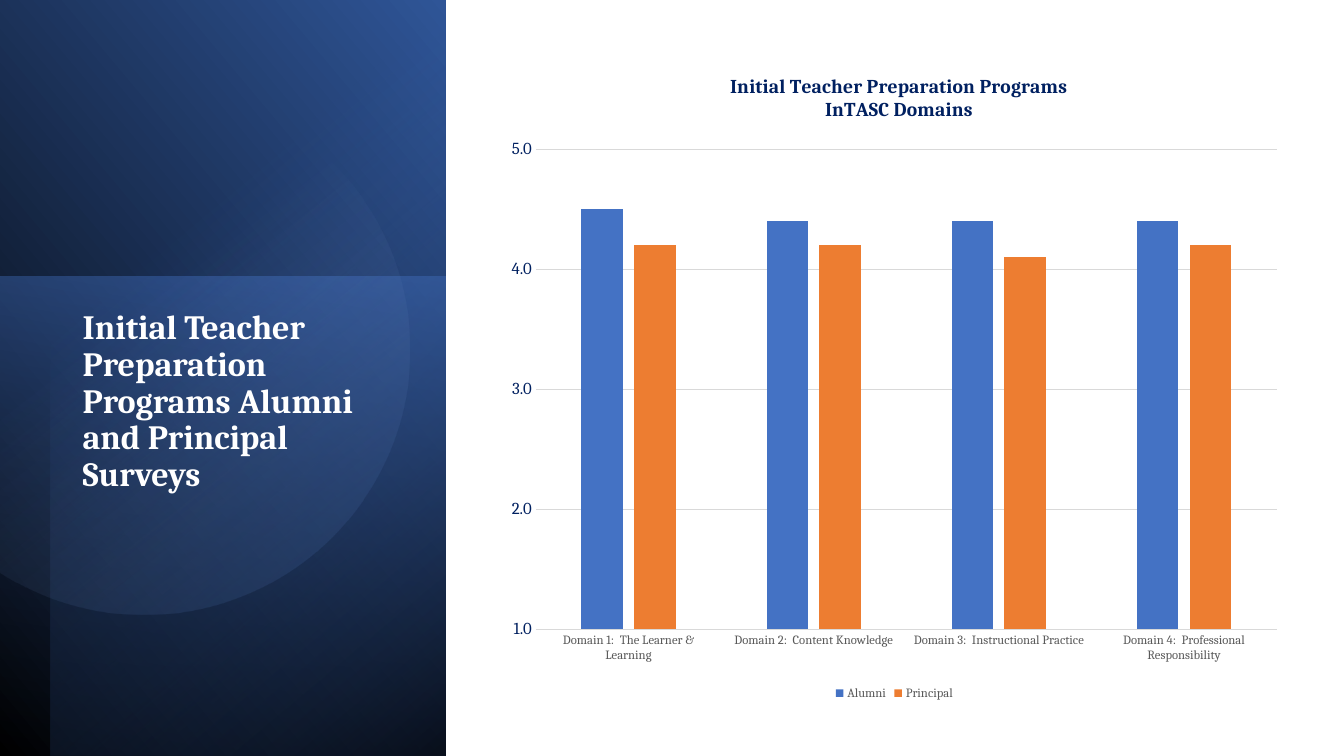
import math

from lxml import etree
from pptx import Presentation
from pptx.chart.data import CategoryChartData
from pptx.dml.color import RGBColor
from pptx.enum.chart import XL_CHART_TYPE, XL_LEGEND_POSITION, XL_TICK_MARK
from pptx.enum.shapes import MSO_SHAPE
from pptx.enum.text import MSO_ANCHOR, MSO_AUTO_SIZE
from pptx.oxml import parse_xml
from pptx.oxml.ns import nsdecls, qn
from pptx.util import Inches, Pt

COLUMNS = XL_CHART_TYPE.COLUMN_CLUSTERED
LEGEND_BOTTOM = XL_LEGEND_POSITION.BOTTOM
NO_TICK = XL_TICK_MARK.NONE
RECTANGLE = MSO_SHAPE.RECTANGLE
FONT = "Cambria"
NAVY, GRAY, GRID = "002060", "595959", "D9D9D9"


def set_font(font, color, **values):
    font.color.rgb = RGBColor.from_string(color)
    for name, value in {"name": FONT, **values}.items():
        setattr(font, name, value)


def set_gradient(shape, stops, angle):
    """Fill with (position %, colour, opacity %) stops, angle clockwise in degrees."""
    shape.shadow.inherit = False
    shape.line.fill.background()
    shape.fill.background()
    stop_xml = "".join(
        f'<a:gs pos="{position * 1000}"><a:srgbClr val="{color}">'
        f'<a:alpha val="{opacity * 1000}"/></a:srgbClr></a:gs>'
        for position, color, opacity in stops)
    gradient = parse_xml(
        f'<a:gradFill {nsdecls("a")} rotWithShape="1"><a:gsLst>{stop_xml}</a:gsLst>'
        f'<a:lin ang="{angle * 60000}" scaled="0"/></a:gradFill>')
    properties = shape.element.spPr
    properties.replace(properties.find(qn("a:noFill")), gradient)


presentation = Presentation()
presentation.slide_width = Inches(13.33)
presentation.slide_height = Inches(7.5)
slide = presentation.slides.add_slide(presentation.slide_layouts[5])

# Left panel: three rotated gradient layers
panel_layers = [
    ((-1.55, 1.55, 7.52, 4.42), 90, True,
     [(0, "000000", 100), (100, "2F5597", 100)], 310),
    ((-0.17, 2.91, 4.76, 4.42), 270, False,
     [(0, "4472C4", 50), (100, "203864", 0)], 190),
    ((-1.29, 1.79, 7.5, 3.92), 270, True,
     [(0, "000000", 59), (69, "4472C4", 0)], 220),
]
for box, rotation, flipped, stops, angle in panel_layers:
    layer = slide.shapes.add_shape(RECTANGLE, *map(Inches, box))
    layer.rotation = rotation
    if flipped:
        layer.element.spPr.xfrm.set("flipH", "1")
    set_gradient(layer, stops, angle)

# Circle cut off by the left slide edge
center_x, center_y, radius = 1.43, 3.47, 2.63
half_arc = math.acos(-center_x / radius)
steps = 120
arc = []
for step in range(steps + 1):
    turn = half_arc * (2 * step / steps - 1)
    arc.append((Inches(center_x + radius * math.cos(turn)),
                Inches(center_y + radius * math.sin(turn))))
builder = slide.shapes.build_freeform(*arc[0])
builder.add_line_segments(arc[1:], close=True)
circle = builder.convert_to_shape()
set_gradient(circle, [(39, "8FAADC", 0), (100, "2F5597", 26)], 52)

# Title, brought in front of the panel
title = slide.shapes.title
title.element.getparent().append(title.element)
title.left, title.top, title.width, title.height = map(Inches, (0.72, 3.03, 3.15, 3.36))
title_frame = title.text_frame
title_frame.text = "Initial Teacher Preparation Programs Alumni and Principal Surveys"
title_format = {"word_wrap": True, "auto_size": MSO_AUTO_SIZE.NONE,
                "vertical_anchor": MSO_ANCHOR.TOP}
for name, value in title_format.items():
    setattr(title_frame, name, value)
paragraph = title_frame.paragraphs[0]
paragraph.alignment = 1
paragraph.line_spacing = 0.9
set_font(paragraph.runs[0].font, "FFFFFF", size=Pt(24.3), bold=True)

# Chart
chart_data = CategoryChartData(number_format="0.0")
chart_data.categories = [
    "Domain 1:  The Learner & Learning",
    "Domain 2:  Content Knowledge",
    "Domain 3:  Instructional Practice",
    "Domain 4:  Professional Responsibility",
]
chart_data.add_series("Alumni", [4.5, 4.4, 4.4, 4.4])
chart_data.add_series("Principal", [4.2, 4.2, 4.1, 4.2])
chart = slide.shapes.add_chart(
    COLUMNS, *map(Inches, (4.92, 0.51, 7.9, 6.48)), chart_data).chart
set_font(chart.font, "000000", size=Pt(10))

# Chart title and legend
chart_title = chart.chart_title
chart_title.include_in_layout = False
chart_title.text_frame.text = "Initial Teacher Preparation Programs\nInTASC Domains"
for paragraph in chart_title.text_frame.paragraphs:
    set_font(paragraph.runs[0].font, NAVY, size=Pt(14), bold=True)
chart.has_legend = True
chart.legend.position = LEGEND_BOTTOM
chart.legend.include_in_layout = False
set_font(chart.legend.font, GRAY, size=Pt(9))

# Columns
plot = chart.plots[0]
plot.gap_width, plot.overlap, plot.vary_by_categories = 219, -27, False
for series, color in zip(plot.series, ("4472C4", "ED7D31")):
    series.format.fill.solid()
    series.format.fill.fore_color.rgb = RGBColor.from_string(color)

# Axes
category_axis, value_axis = chart.category_axis, chart.value_axis
value_format = {"minimum_scale": 1, "maximum_scale": 5, "major_unit": 1,
                "has_major_gridlines": True}
for name, value in value_format.items():
    setattr(value_axis, name, value)
for axis, color, size in ((category_axis, GRAY, 9), (value_axis, NAVY, 12)):
    axis.major_tick_mark = axis.minor_tick_mark = NO_TICK
    set_font(axis.tick_labels.font, color, size=Pt(size))
value_axis.tick_labels.number_format = "0.0"
value_axis.tick_labels.number_format_is_linked = False
value_axis.format.line.fill.background()
for line in (category_axis.format.line, value_axis.major_gridlines.format.line):
    line.color.rgb = RGBColor.from_string(GRID)
    line.width = Pt(0.75)

# Fixed places for the plot area and the chart title, as fractions of the chart
plot_area = plot._element.getparent()
title_element = chart_title._element
layouts = [
    (plot_area, 0, {"layoutTarget": "inner", "xMode": "edge", "yMode": "edge",
                    "x": 0.05, "y": 0.15, "w": 0.93, "h": 0.735}),
    (title_element, 1, {"xMode": "edge", "yMode": "edge", "x": 0.29, "y": 0.03}),
]
for parent, index, settings in layouts:
    for old_layout in parent.findall(qn("c:layout")):
        parent.remove(old_layout)
    layout = etree.Element(qn("c:layout"))
    manual = etree.SubElement(layout, qn("c:manualLayout"))
    for name, value in settings.items():
        etree.SubElement(manual, qn(f"c:{name}")).set("val", str(value))
    parent.insert(index, layout)

presentation.save("out.pptx")
